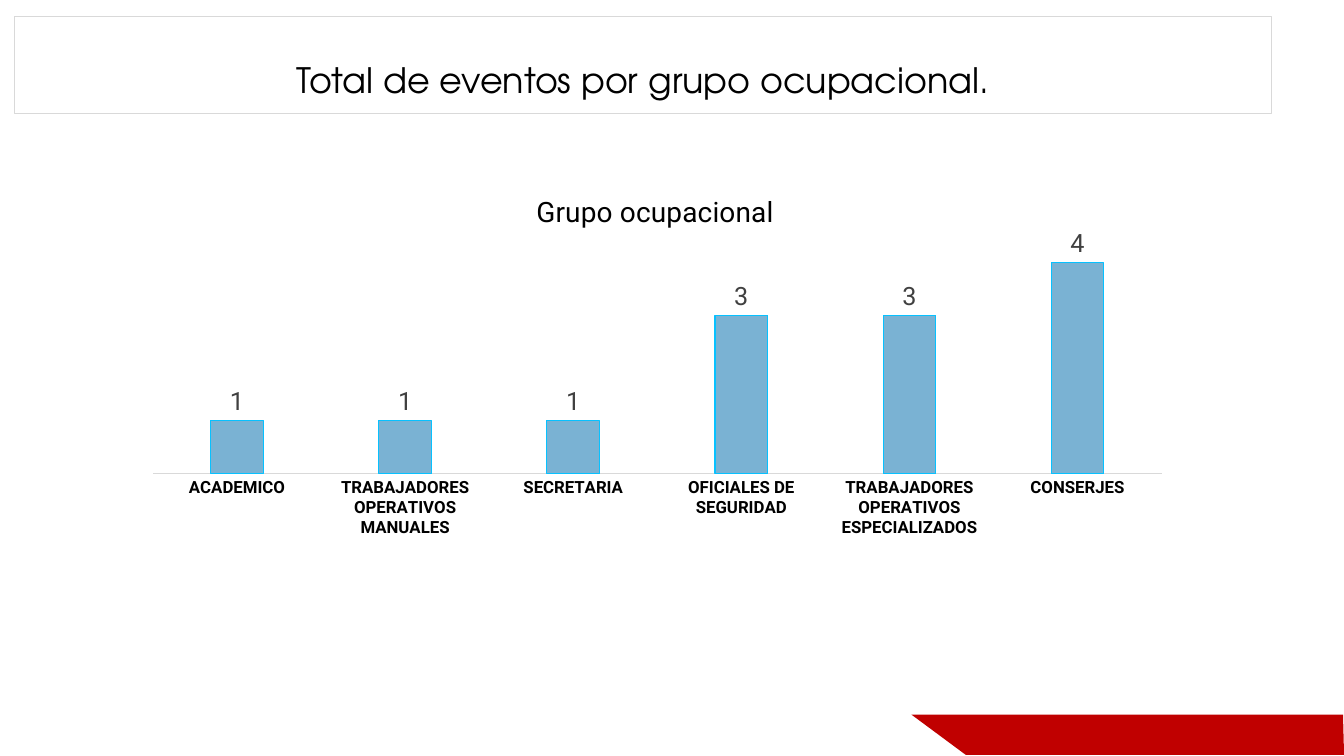
import pptx
import pptx.util
import pptx.chart.data
import pptx.dml.color
import pptx.enum.chart
import pptx.enum.text
import pptx.oxml
import pptx.oxml.ns

Inches, Pt = pptx.util.Inches, pptx.util.Pt
RGBColor = pptx.dml.color.RGBColor

# Content
HEADING = "Total de eventos por grupo ocupacional."
CHART_TITLE = "Grupo ocupacional"
EVENTS = {
    "ACADEMICO": 1,
    "TRABAJADORES OPERATIVOS MANUALES": 1,
    "SECRETARIA": 1,
    "OFICIALES DE SEGURIDAD": 3,
    "TRABAJADORES OPERATIVOS ESPECIALIZADOS": 3,
    "CONSERJES": 4,
}

# Look
BLACK = RGBColor(0x00, 0x00, 0x00)
GRAY = RGBColor(0x40, 0x40, 0x40)
PALE = RGBColor(0xD9, 0xD9, 0xD9)
RED = RGBColor(0xC0, 0x00, 0x00)
BAR = RGBColor(0x7A, 0xB2, 0xD3)
BAR_EDGE = RGBColor(0x07, 0xC1, 0xFF)
WHITE = RGBColor(0xFF, 0xFF, 0xFF)
HEADING_FONT = {"name": "TeX Gyre Adventor", "size": Pt(25), "bold": False}
TITLE_FONT = {"name": "Roboto", "size": Pt(20), "bold": False}
CATEGORY_FONT = {"name": "Roboto", "size": Pt(12), "bold": True}
LABEL_FONT = {"name": "Roboto", "size": Pt(18), "bold": False}

# Places, in inches
WIDTH, HEIGHT = 13.33, 7.5
HEADING_BOX = (0.14, 0.16, 12.47, 0.97)
CHART_BOX = (1.31, 1.72, 10.42, 3.68)
BAND = [(9.04, 7.09), (13.32, 7.09), (WIDTH, 7.49), (9.58, 7.49)]

# Shares of the chart's size
TITLE_PLACE = {"x": 0.38, "y": 0.04}
PLOT_PLACE = {"x": 0.02, "y": 0.17, "w": 0.96, "h": 0.64}


def set_all(target, values):
    for name, value in values.items():
        setattr(target, name, value)


def set_font(font, values, color):
    set_all(font, values)
    font.color.rgb = color


def set_line(line, color):
    line.color.rgb = color
    line.width = Pt(0.75)


def set_layout(element, place, inner=False):
    """Fix the place of a chart part as shares of the chart."""
    for old in element.findall(pptx.oxml.ns.qn("c:layout")):
        element.remove(old)
    target = '<c:layoutTarget val="inner"/>' if inner else ""
    modes = "".join(f'<c:{key}Mode val="edge"/>' for key in "xy")
    sizes = "".join(f'<c:{key} val="{share}"/>' for key, share in place.items())
    layout = pptx.oxml.parse_xml(
        f'<c:layout {pptx.oxml.ns.nsdecls("c")}><c:manualLayout>'
        f"{target}{modes}{sizes}</c:manualLayout></c:layout>")
    text = element.find(pptx.oxml.ns.qn("c:tx"))
    element.insert(0 if text is None else 1, layout)


def add_band(page):
    points = [(Inches(x), Inches(y)) for x, y in BAND]
    builder = page.shapes.build_freeform(*points[0], scale=1.0)
    builder.add_line_segments(points[1:], close=True)
    band = builder.convert_to_shape()
    band.shadow.inherit = False
    band.fill.solid()
    band.fill.fore_color.rgb = RED
    band.line.fill.background()


def add_heading(page):
    box = page.shapes.title
    set_all(box, dict(zip(("left", "top", "width", "height"), map(Inches, HEADING_BOX))))
    # Rounded outline
    box._element.spPr.insert(1, pptx.oxml.parse_xml(
        f'<a:prstGeom {pptx.oxml.ns.nsdecls("a")} prst="roundRect"><a:avLst/></a:prstGeom>'))
    box.fill.background()
    set_line(box.line, PALE)
    frame = box.text_frame
    margins = ("margin_left", "margin_top", "margin_right", "margin_bottom")
    set_all(frame, dict.fromkeys(margins, Inches(0.13)))
    set_all(frame, {"word_wrap": True,
                    "auto_size": pptx.enum.text.MSO_AUTO_SIZE.NONE,
                    "vertical_anchor": pptx.enum.text.MSO_ANCHOR.BOTTOM})
    frame.text = HEADING
    para = frame.paragraphs[0]
    set_all(para, {"alignment": pptx.enum.text.PP_ALIGN.CENTER,
                   "line_spacing": 0.9, "space_before": Pt(0)})
    set_font(para.runs[0].font, HEADING_FONT, BLACK)


def add_events_chart(page):
    data = pptx.chart.data.CategoryChartData()
    data.categories = list(EVENTS)
    data.add_series("Series 1", list(EVENTS.values()))
    chart = page.shapes.add_chart(
        pptx.enum.chart.XL_CHART_TYPE.COLUMN_CLUSTERED,
        *map(Inches, CHART_BOX), data).chart
    chart.has_legend = False
    set_font(chart.font, {"name": "Roboto", "size": Pt(10)}, BLACK)

    # Title
    title = chart.chart_title
    title.text_frame.text = CHART_TITLE
    set_font(title.text_frame.paragraphs[0].runs[0].font, TITLE_FONT, BLACK)
    title.include_in_layout = False
    set_layout(title._element, TITLE_PLACE)

    # Axes
    axis = chart.category_axis
    axis.major_tick_mark = pptx.enum.chart.XL_TICK_MARK.NONE
    set_font(axis.tick_labels.font, CATEGORY_FONT, BLACK)
    set_line(axis.format.line, PALE)
    set_all(chart.value_axis, {"visible": False, "has_major_gridlines": False,
                               "minimum_scale": 0, "maximum_scale": 4.5})

    # Columns and their values
    plot = chart.plots[0]
    set_all(plot, {"gap_width": 219, "overlap": -27,
                   "vary_by_categories": False, "has_data_labels": True})
    labels = plot.data_labels
    set_all(labels, {"show_value": True,
                     "position": pptx.enum.chart.XL_LABEL_POSITION.OUTSIDE_END})
    set_font(labels.font, LABEL_FONT, GRAY)
    columns = plot.series[0].format
    columns.fill.solid()
    columns.fill.fore_color.rgb = BAR
    set_line(columns.line, BAR_EDGE)
    set_layout(chart._chartSpace.chart.plotArea, PLOT_PLACE, inner=True)


def main():
    deck = pptx.Presentation()
    set_all(deck, {"slide_width": Inches(WIDTH), "slide_height": Inches(HEIGHT)})
    page = deck.slides.add_slide(deck.slide_layouts[5])
    page.background.fill.solid()
    page.background.fill.fore_color.rgb = WHITE
    add_band(page)
    add_heading(page)
    add_events_chart(page)
    deck.save("out.pptx")


if __name__ == "__main__":
    main()
